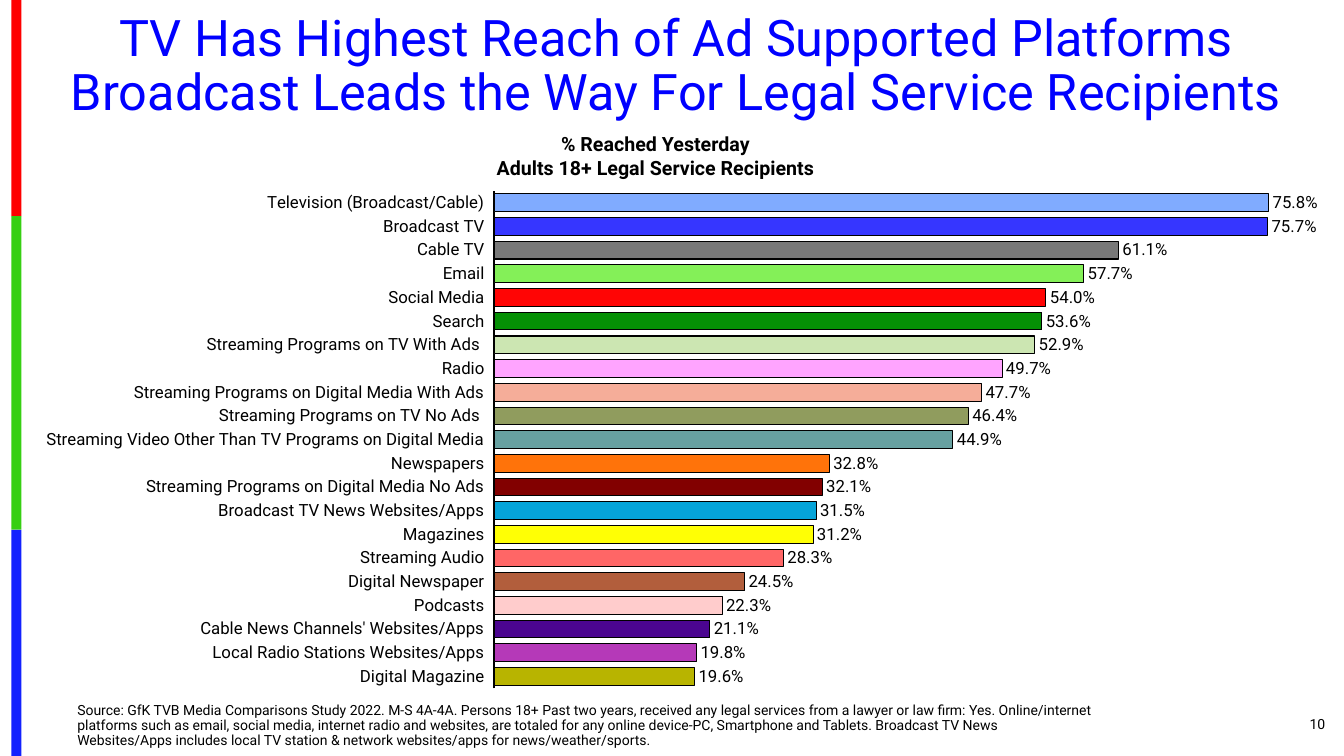
from dataclasses import dataclass

from lxml import etree
from pptx import Presentation
from pptx.chart.data import CategoryChartData
from pptx.dml.color import RGBColor
from pptx.enum.chart import XL_CHART_TYPE as ChartType, XL_LABEL_POSITION as LabelPos
from pptx.enum.chart import XL_TICK_LABEL_POSITION as TickLabel, XL_TICK_MARK as Tick
from pptx.enum.shapes import MSO_SHAPE as Shape
from pptx.enum.text import MSO_ANCHOR as Anchor, PP_ALIGN as Align
from pptx.oxml.ns import qn
from pptx.util import Cm, Pt


@dataclass(frozen=True)
class Theme:
    font: str = "Roboto"
    ink: str = "000000"
    title: str = "0000FF"
    red: str = "FE0000"
    green: str = "36CF12"
    blue: str = "1322FE"
    title_size: int = 36
    heading_size: int = 14
    chart_size: int = 12
    note_size: int = 10


# Platform, percent reached, bar colour
REACH = [
    ("Television (Broadcast/Cable)", 75.8, "80ABFF"),
    ("Broadcast TV", 75.7, "3636FF"),
    ("Cable TV", 61.1, "787878"),
    ("Email", 57.7, "84F058"),
    ("Social Media", 54.0, "FF0505"),
    ("Search", 53.6, "059005"),
    ("Streaming Programs on TV With Ads ", 52.9, "CCE6B2"),
    ("Radio", 49.7, "FFA4FF"),
    ("Streaming Programs on Digital Media With Ads", 47.7, "F5AD99"),
    ("Streaming Programs on TV No Ads ", 46.4, "909C5E"),
    ("Streaming Video Other Than TV Programs on Digital Media", 44.9, "67A1A1"),
    ("Newspapers", 32.8, "FF730A"),
    ("Streaming Programs on Digital Media No Ads", 32.1, "820000"),
    ("Broadcast TV News Websites/Apps", 31.5, "05A4D9"),
    ("Magazines", 31.2, "FFFF05"),
    ("Streaming Audio", 28.3, "FF6666"),
    ("Digital Newspaper", 24.5, "B25E3C"),
    ("Podcasts", 22.3, "FFCCCC"),
    ("Cable News Channels' Websites/Apps", 21.1, "4B0590"),
    ("Local Radio Stations Websites/Apps", 19.8, "B539B8"),
    ("Digital Magazine", 19.6, "B8B400"),
]

SOURCE = (
    "Source: GfK TVB Media Comparisons Study 2022. M-S 4A-4A. Persons 18+ Past two years, "
    "received any legal services from a lawyer or law firm: Yes. Online/internet platforms "
    "such as email, social media, internet radio and websites, are totaled for any online "
    "device-PC, Smartphone and Tablets. Broadcast TV News Websites/Apps includes local TV "
    "station & network websites/apps for news/weather/sports."
)


class SlideBuilder:
    def __init__(self, slide, theme):
        self.slide = slide
        self.theme = theme

    def style_font(self, font, size, color=None, bold=False):
        font.name = self.theme.font
        font.size = Pt(size)
        font.bold = bold
        font.color.rgb = RGBColor.from_string(color or self.theme.ink)

    def fill_text(self, sp, text, size, align, anchor, color=None, bold=False, spacing=1.0):
        tf = sp.text_frame
        tf.text = text
        tf.word_wrap = True
        tf.vertical_anchor = anchor
        for p in tf.paragraphs:
            p.alignment = align
            p.line_spacing = spacing
            p.space_before = Pt(0)
            for r in p.runs:
                self.style_font(r.font, size, color, bold)

    def title(self, text, box):
        sp = self.slide.shapes.title
        sp.left, sp.top, sp.width, sp.height = map(Cm, box)
        self.fill_text(sp, text, self.theme.title_size, Align.CENTER, Anchor.TOP,
                       color=self.theme.title, spacing=0.9)

    def text(self, text, box, size, align=Align.LEFT, anchor=Anchor.TOP, **style):
        sp = self.slide.shapes.add_textbox(*map(Cm, box))
        self.fill_text(sp, text, size, align, anchor, **style)

    def stripe(self, box, color):
        sp = self.slide.shapes.add_shape(Shape.RECTANGLE, *map(Cm, box))
        sp.shadow.inherit = False
        sp.fill.solid()
        sp.fill.fore_color.rgb = RGBColor.from_string(color)
        sp.line.fill.background()

    def outline(self, line, width):
        line.color.rgb = RGBColor.from_string(self.theme.ink)
        line.width = Pt(width)

    def place_plot(self, chart, **fractions):
        plot_area = chart._chartSpace.chart.plotArea
        for old in plot_area.findall(qn("c:layout")):
            plot_area.remove(old)
        layout = etree.Element(qn("c:layout"))
        manual = etree.SubElement(layout, qn("c:manualLayout"))
        settings = {"layoutTarget": "inner", "xMode": "edge", "yMode": "edge", **fractions}
        for tag, value in settings.items():
            etree.SubElement(manual, qn(f"c:{tag}")).set("val", str(value))
        plot_area.insert(0, layout)

    def bar_chart(self, rows, box):
        data = CategoryChartData(number_format="0.0%")
        data.categories = [name for name, _, _ in rows]
        data.add_series("Reached Yesterday", [round(pct / 100, 3) for _, pct, _ in rows])
        frame = self.slide.shapes.add_chart(ChartType.BAR_CLUSTERED, *map(Cm, box), data)
        chart = frame.chart
        chart.has_title = False
        chart.has_legend = False
        self.style_font(chart.font, self.theme.chart_size)
        self.place_plot(chart, x=0.369, y=0.053, w=0.62, h=0.946)

        # Axes
        cat_axis, val_axis = chart.category_axis, chart.value_axis
        cat_axis.reverse_order = True
        cat_axis.major_tick_mark = Tick.NONE
        cat_axis.tick_label_position = TickLabel.LOW
        self.style_font(cat_axis.tick_labels.font, self.theme.chart_size)
        self.outline(cat_axis.format.line, 1.5)
        val_axis.minimum_scale, val_axis.maximum_scale = 0, 0.8
        val_axis.has_major_gridlines = False
        val_axis.visible = False

        # Bars and value labels
        plot = chart.plots[0]
        plot.gap_width = 34
        plot.vary_by_categories = False
        series = plot.series[0]
        for i, (_, _, color) in enumerate(rows):
            bar = series.points[i].format
            bar.fill.solid()
            bar.fill.fore_color.rgb = RGBColor.from_string(color)
            self.outline(bar.line, 0.75)
        labels = series.data_labels
        labels.show_value = True
        labels.number_format = "0.0%"
        labels.number_format_is_linked = False
        labels.position = LabelPos.OUTSIDE_END
        self.style_font(labels.font, self.theme.chart_size)


def main():
    prs = Presentation()
    prs.slide_width, prs.slide_height = Cm(33.87), Cm(19.05)
    theme = Theme()
    s = SlideBuilder(prs.slides.add_slide(prs.slide_layouts[5]), theme)

    # Colour stripes down the left edge
    top = 0
    for color, height in ((theme.red, 5.45), (theme.green, 7.9), (theme.blue, 5.7)):
        s.stripe((0.29, top, 0.25, height), color)
        top += height

    # Title and chart heading
    s.title("TV Has Highest Reach of Ad Supported Platforms "
            "Broadcast Leads the Way For Legal Service Recipients", (1.27, 0.2, 31.55, 3.02))
    s.text("% Reached Yesterday\nAdults 18+ Legal Service Recipients",
           (8.05, 3.2, 16.94, 1.45), theme.heading_size, Align.CENTER, bold=True)

    # Reach by platform
    s.bar_chart(REACH, (0.2, 4.11, 33.22, 13.26))

    # Source and page number
    s.text(SOURCE, (1.7, 17.58, 26.04, 1.42), theme.note_size, anchor=Anchor.BOTTOM, spacing=0.9)
    s.text("10", (30.91, 17.73, 2.74, 1.02), theme.note_size, Align.RIGHT, Anchor.MIDDLE)

    prs.save("out.pptx")


if __name__ == "__main__":
    main()
